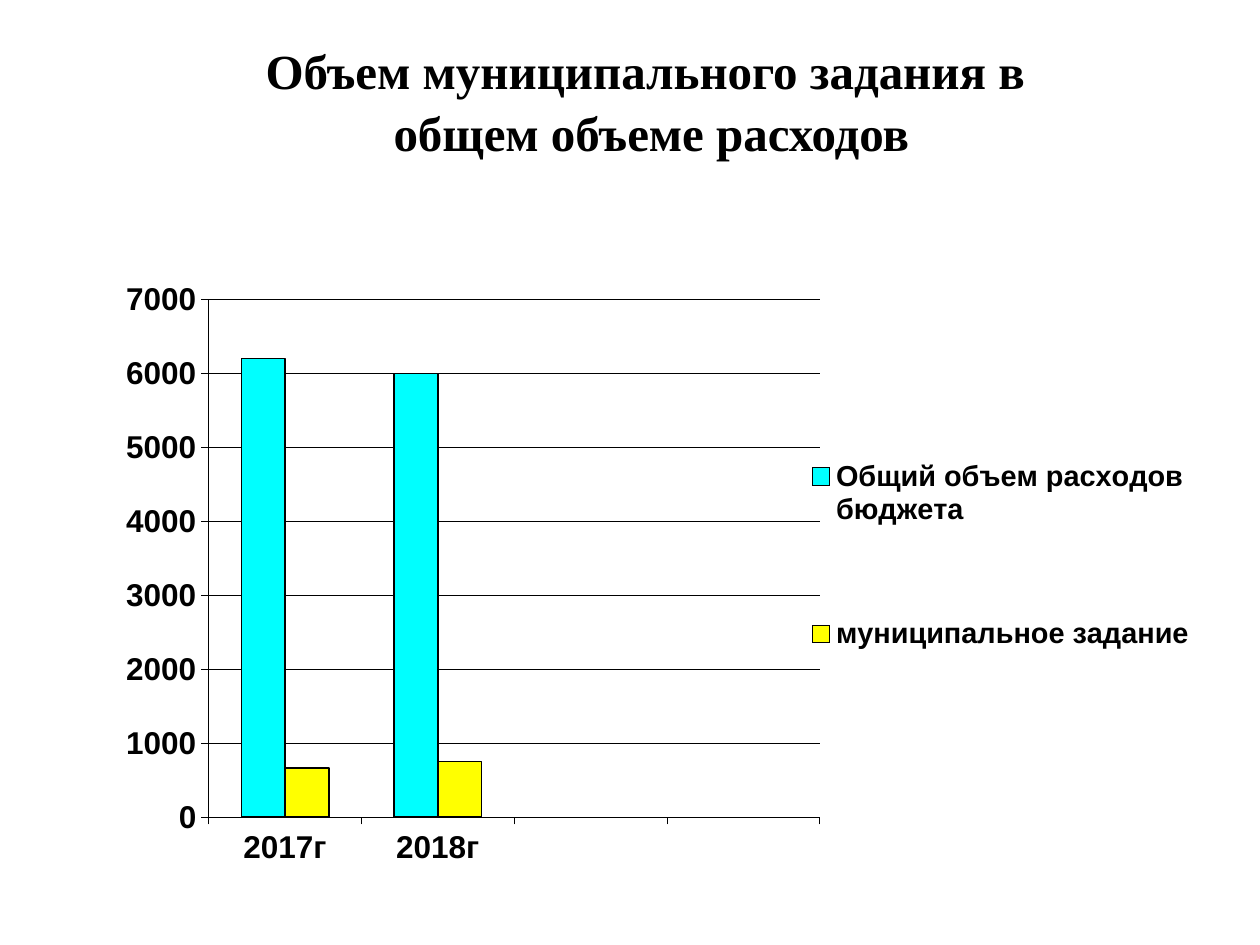
from lxml import etree
from pptx import Presentation
from pptx import util as u
from pptx.chart.data import CategoryChartData
from pptx.dml.color import RGBColor
from pptx.enum import chart as ch, text
from pptx.oxml import parse_xml
from pptx.oxml.ns import nsdecls, qn

BLACK = RGBColor(0, 0, 0)
CYAN = RGBColor(0, 255, 255)
YELLOW = RGBColor(255, 255, 0)


class Deck:
    axis_size, legend_size = u.Pt(18), u.Pt(16.5)

    def __init__(self, prs):
        self.s = prs.slides.add_slide(prs.slide_layouts[6])

    def style(self, font, **values):
        for name, value in values.items():
            setattr(font, name, value)
        font.color.rgb = BLACK

    def outline(self, line, width):
        line.color.rgb = BLACK
        line.width = u.Pt(width)

    def place(self, parent, before, box, inner=False):
        """Fix a chart part at box, given as fractions of the chart."""
        old = parent.find(qn("c:layout"))
        if old is not None:
            parent.remove(old)
        layout = parse_xml(f"<c:layout {nsdecls('c')}><c:manualLayout/></c:layout>")
        values = [("layoutTarget", "inner")] if inner else []
        values += [("xMode", "edge"), ("yMode", "edge"), *zip("xywh", box)]
        for tag, value in values:
            etree.SubElement(layout[0], qn(f"c:{tag}")).set("val", str(value))
        parent.find(qn(before)).addprevious(layout)

    def title(self, box, lines):
        tf = self.s.shapes.add_textbox(*map(u.Cm, box)).text_frame
        tf.word_wrap = True
        tf.vertical_anchor = text.MSO_ANCHOR.TOP
        for i, line in enumerate(lines):
            p = tf.add_paragraph() if i else tf.paragraphs[0]
            p.alignment = text.PP_ALIGN.CENTER
            p.line_spacing = 1.05
            r = p.add_run()
            r.text = line
            self.style(r.font, name="Times New Roman", size=u.Pt(28), bold=True)

    def columns(self, box, categories, series):
        data = CategoryChartData(number_format="General")
        data.categories = categories
        for name, values, _ in series:
            data.add_series(name, values)
        chart = self.s.shapes.add_chart(
            ch.XL_CHART_TYPE.COLUMN_CLUSTERED, *map(u.Cm, box), data).chart
        chart.has_title = False
        self.style(chart.font, name="Arial", size=self.axis_size, bold=True)
        plot = chart.plots[0]
        plot.gap_width, plot.overlap, plot.vary_by_categories = 150, 0, False
        for item, (_, _, color) in zip(plot.series, series):
            item.format.fill.solid()
            item.format.fill.fore_color.rgb = color
            self.outline(item.format.line, 1)
        self.axes(chart)
        self.legend(chart)
        self.place(plot._element.getparent(), "c:barChart",
                   (0.12, 0.05, 0.54, 0.83), inner=True)

    def axes(self, chart):
        for axis in (chart.category_axis, chart.value_axis):
            axis.major_tick_mark = ch.XL_TICK_MARK.OUTSIDE
            axis.minor_tick_mark = ch.XL_TICK_MARK.NONE
            self.outline(axis.format.line, 0.25)
            self.style(axis.tick_labels.font, name="Arial",
                       size=self.axis_size, bold=True)
        chart.category_axis.tick_label_position = ch.XL_TICK_LABEL_POSITION.LOW
        value = chart.value_axis
        value.minimum_scale, value.maximum_scale, value.major_unit = 0, 7000, 1000
        value.has_major_gridlines = True
        self.outline(value.major_gridlines.format.line, 0.25)

    def legend(self, chart):
        chart.has_legend = True
        legend = chart.legend
        legend.position = ch.XL_LEGEND_POSITION.RIGHT
        legend.include_in_layout = False
        self.style(legend.font, name="Arial", size=self.legend_size, bold=True)
        self.place(legend._element, "c:overlay", (0.64, 0.16, 0.36, 0.6))


def main():
    prs = Presentation()
    prs.slide_width, prs.slide_height = u.Cm(25.4), u.Cm(19.05)
    deck = Deck(prs)
    deck.title((1.7, 0.64, 22.86, 3.18),
               ["Объем муниципального задания в ", "общем объеме расходов"])
    deck.columns((1.47, 5.41, 22.81, 12.57), ["2017г", "2018г", "", ""], [
        ("Общий объем расходов бюджета", (6200, 6000, None, None), CYAN),
        ("муниципальное задание", (660, 750, None, None), YELLOW),
    ])
    prs.save("out.pptx")


if __name__ == "__main__":
    main()
